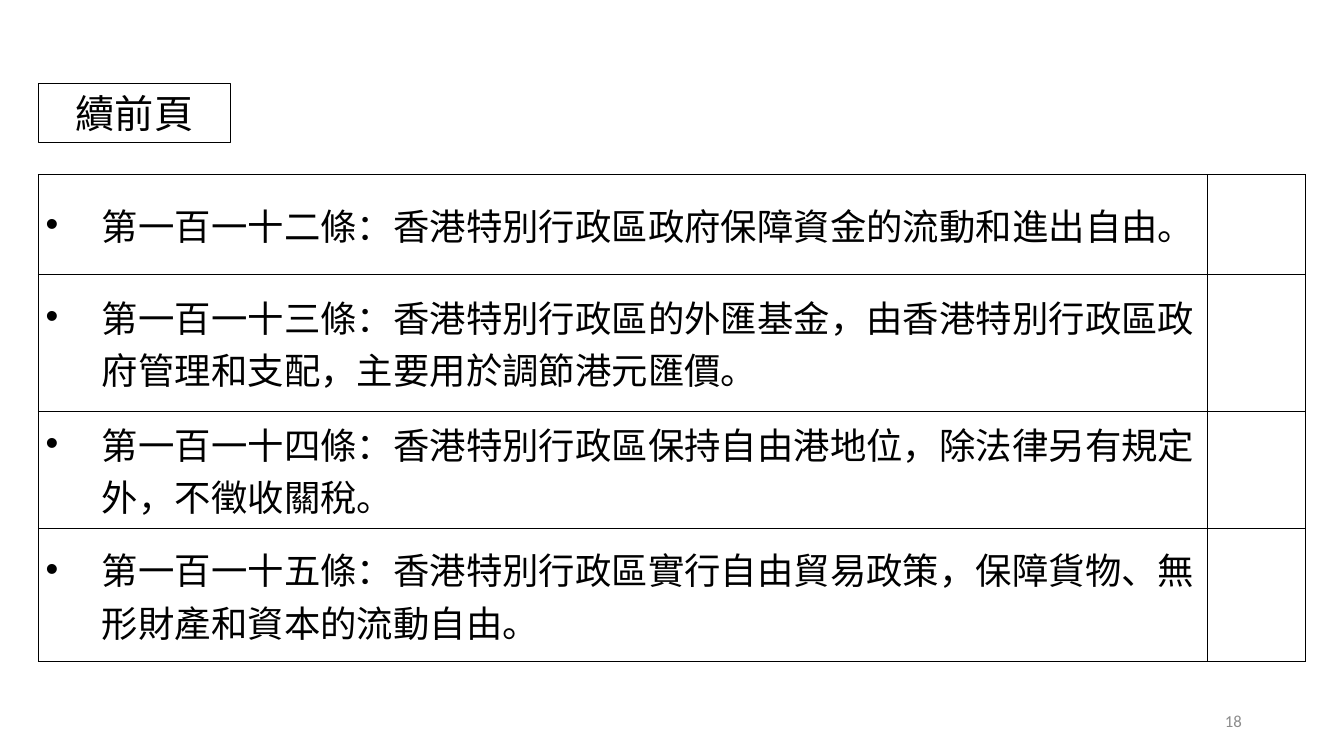
from dataclasses import dataclass

from lxml.etree import SubElement
from pptx import Presentation
from pptx.dml.color import RGBColor
from pptx.enum.shapes import MSO_SHAPE
from pptx.enum.text import MSO_ANCHOR, PP_ALIGN
from pptx.oxml.ns import qn
from pptx.util import Cm, Pt

HEADING = "續前頁"
ARTICLES = [
    "第一百一十二條：香港特別行政區政府保障資金的流動和進出自由。",
    "第一百一十三條：香港特別行政區的外匯基金，由香港特別行政區政府管理和支配，主要用於調節港元匯價。",
    "第一百一十四條：香港特別行政區保持自由港地位，除法律另有規定外，不徵收關稅。",
    "第一百一十五條：香港特別行政區實行自由貿易政策，保障貨物、無形財產和資本的流動自由。",
]
PAGE_NUMBER = "18"

ROW_HEIGHTS = [Cm(2.51), Cm(3.45), Cm(2.95), Cm(3.36)]
COLUMN_WIDTHS = [Cm(29.46), Cm(2.46)]
LEFT = Cm(0.97)
INDENT = Cm(1.42)


@dataclass(frozen=True)
class Theme:
    ink: RGBColor = RGBColor(0, 0, 0)
    muted: RGBColor = RGBColor(0x8C, 0x8C, 0x8C)
    heading_font: str = "Calibri"
    article_font: str = "Times New Roman"
    heading_size: Pt = Pt(28)
    article_size: Pt = Pt(26)
    number_size: Pt = Pt(12)
    frame_line: Pt = Pt(0.75)
    grid_line: Pt = Pt(1)


THEME = Theme()


def write(frame, text, font, size, color, align):
    frame.text = text
    paragraph = frame.paragraphs[0]
    paragraph.alignment = align
    run = paragraph.runs[0]
    run.font.name = font
    run.font.size = size
    run.font.color.rgb = color
    return paragraph


def add_bullet(paragraph):
    properties = paragraph._p.get_or_add_pPr()
    properties.set("marL", str(INDENT))
    properties.set("indent", str(-INDENT))
    SubElement(properties, qn("a:buFont"), typeface="Arial")
    SubElement(properties, qn("a:buChar"), char="•")


def style_cell(cell):
    properties = cell._tc.get_or_add_tcPr()
    for side in ("a:lnL", "a:lnR", "a:lnT", "a:lnB"):
        border = SubElement(properties, qn(side), w=str(THEME.grid_line))
        fill = SubElement(border, qn("a:solidFill"))
        SubElement(fill, qn("a:srgbClr"), val=str(THEME.ink))
    cell.fill.background()
    cell.vertical_anchor = MSO_ANCHOR.MIDDLE
    cell.margin_left = cell.margin_right = Cm(0.18)
    cell.margin_top = cell.margin_bottom = 0


def add_page_number(slide):
    number = slide.shapes.add_textbox(Cm(23.93), Cm(17.65), Cm(7.62), Cm(1.02))
    frame = number.text_frame
    frame.word_wrap = True
    frame.vertical_anchor = MSO_ANCHOR.MIDDLE
    write(frame, PAGE_NUMBER, THEME.heading_font, THEME.number_size,
          THEME.muted, PP_ALIGN.RIGHT)


def add_articles(slide):
    articles = slide.shapes.add_table(
        len(ROW_HEIGHTS), len(COLUMN_WIDTHS), LEFT, Cm(4.4),
        sum(COLUMN_WIDTHS), sum(ROW_HEIGHTS)).table
    articles.first_row = False
    articles.horz_banding = False
    for column, width in zip(articles.columns, COLUMN_WIDTHS):
        column.width = width
    for row, height, article in zip(articles.rows, ROW_HEIGHTS, ARTICLES):
        row.height = height
        for cell in row.cells:
            style_cell(cell)
        add_bullet(write(row.cells[0].text_frame, article, THEME.article_font,
                         THEME.article_size, THEME.ink, PP_ALIGN.LEFT))


def add_heading(slide):
    heading = slide.shapes.add_shape(
        MSO_SHAPE.RECTANGLE, LEFT, Cm(2.1), Cm(4.84), Cm(1.49))
    heading.shadow.inherit = False
    heading.fill.background()
    heading.line.color.rgb = THEME.ink
    heading.line.width = THEME.frame_line
    heading.text_frame.word_wrap = True
    heading.text_frame.vertical_anchor = MSO_ANCHOR.MIDDLE
    write(heading.text_frame, HEADING, THEME.heading_font, THEME.heading_size,
          THEME.ink, PP_ALIGN.CENTER)


def main():
    deck = Presentation()
    deck.slide_width, deck.slide_height = Cm(33.87), Cm(19.05)
    slide = deck.slides.add_slide(deck.slide_layouts[6])
    add_page_number(slide)
    add_articles(slide)
    add_heading(slide)
    deck.save("out.pptx")


if __name__ == "__main__":
    main()
